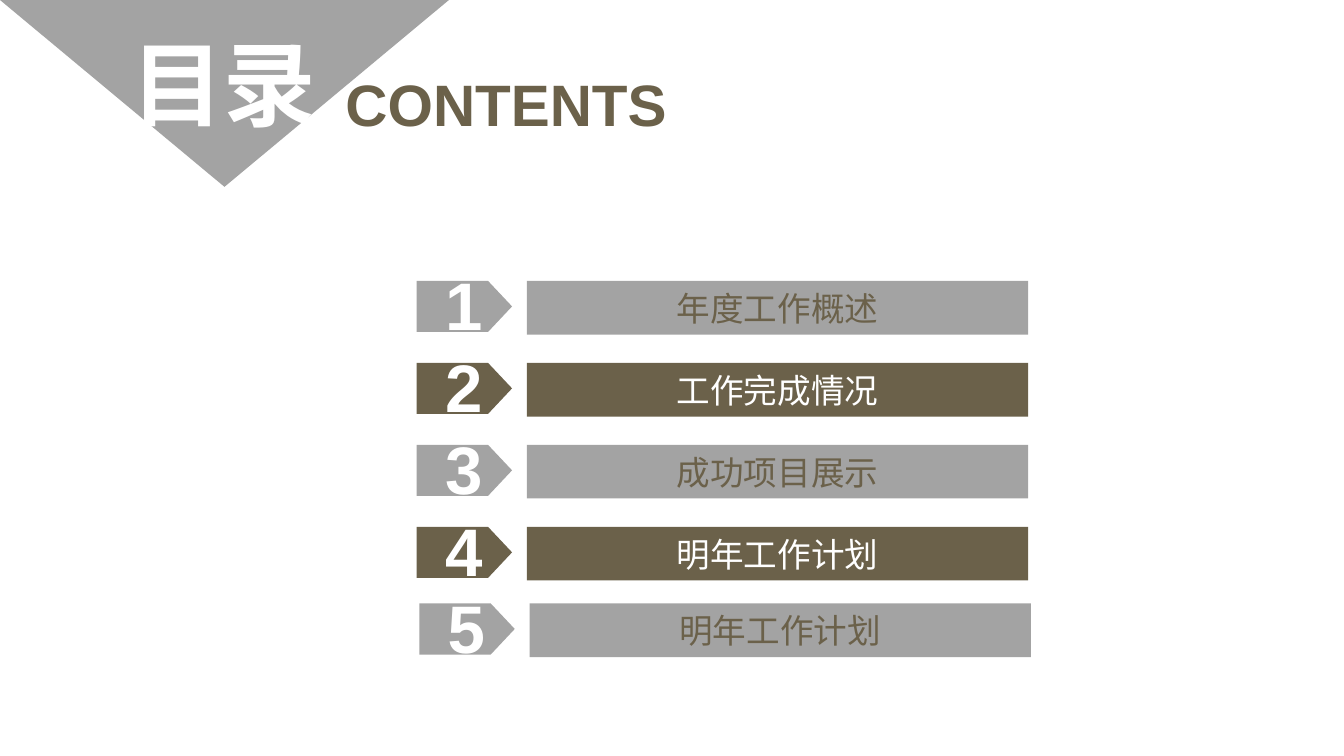
from pptx import Presentation
from pptx.dml.color import RGBColor
from pptx.enum import shapes, text
from pptx.util import Inches, Pt

GRAY = RGBColor(0xA3, 0xA3, 0xA3)
BROWN = RGBColor(0x6B, 0x61, 0x4A)
WHITE = RGBColor(0xFF, 0xFF, 0xFF)

FONT = "Arial"
TOPICS = ["年度工作概述", "工作完成情况", "成功项目展示", "明年工作计划", "明年工作计划"]
LIST_LEFT, LIST_TOP, ROW_STEP = 3.1, 2.09, 0.61
# The last row sits slightly to the right and closer to the one above.
LAST_LEFT, LAST_TOP = 3.12, 4.49


def add_block(slide, preset, box, color):
    block = slide.shapes.add_shape(preset, *map(Inches, box))
    block.shadow.inherit = False
    block.fill.solid()
    block.fill.fore_color.rgb = color
    block.line.fill.background()
    return block


def write(frame, wording, size, color, bold=False, align=None):
    frame.auto_size = text.MSO_AUTO_SIZE.SHAPE_TO_FIT_TEXT
    paragraph = frame.paragraphs[0]
    paragraph.alignment = align
    run = paragraph.add_run()
    run.text = wording
    run.font.color.rgb = color
    font_format = {"name": FONT, "size": Pt(size), "bold": bold}
    for name, value in font_format.items():
        setattr(run.font, name, value)


def add_label(slide, box, wording, size, color, wrap=False, align=None):
    """Add a bold text box without margins."""
    frame = slide.shapes.add_textbox(*map(Inches, box)).text_frame
    frame.word_wrap = wrap
    for side in ("left", "top", "right", "bottom"):
        setattr(frame, f"margin_{side}", 0)
    write(frame, wording, size, color, bold=True, align=align)


def add_heading(slide):
    corner = add_block(slide, shapes.MSO_SHAPE.ISOSCELES_TRIANGLE,
                       (0, 0, 3.34, 1.39), GRAY)
    corner.rotation = 180
    add_label(slide, (0.98, 0.2, 1.39, 0.83), "目录", 49.5, WHITE)
    add_label(slide, (2.57, 0.51, 2.42, 0.53), "CONTENTS", 31.3, BROWN, wrap=True)


def add_topic(slide, number, topic, left, top):
    """Add a numbered tag and its topic bar; even rows are brown."""
    center = text.PP_ALIGN.CENTER
    fill, ink = (GRAY, BROWN) if number % 2 else (BROWN, WHITE)
    bar = add_block(slide, shapes.MSO_SHAPE.RECTANGLE,
                    (left + 0.82, top, 3.73, 0.4), fill)
    write(bar.text_frame, topic, 18, ink, align=center)
    tag = add_block(slide, shapes.MSO_SHAPE.PENTAGON, (left, top, 0.71, 0.38), fill)
    tag.adjustments[0] = 0.47
    add_label(slide, (left + 0.21, top - 0.13, 0.28, 0.61), str(number), 36, WHITE,
              align=center)


def main():
    deck = Presentation()
    deck.slide_width = Inches(10)
    deck.slide_height = deck.slide_width * 9 // 16
    slide = deck.slides.add_slide(deck.slide_layouts[6])
    add_heading(slide)
    for number, topic in enumerate(TOPICS, 1):
        if number < len(TOPICS):
            left, top = LIST_LEFT, LIST_TOP + (number - 1) * ROW_STEP
        else:
            left, top = LAST_LEFT, LAST_TOP
        add_topic(slide, number, topic, left, top)
    deck.save("out.pptx")


if __name__ == "__main__":
    main()
